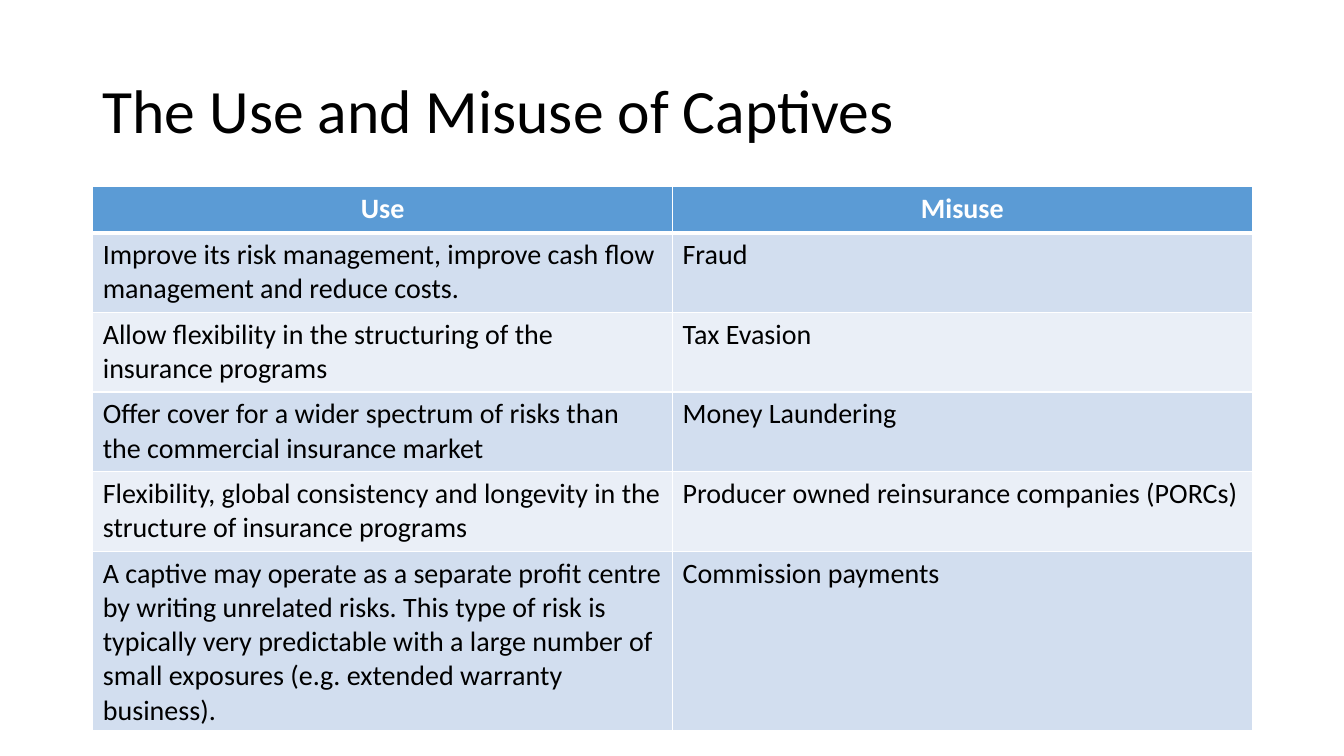
from lxml import etree
from pptx import Presentation
from pptx.dml.color import RGBColor
from pptx.enum.text import MSO_ANCHOR, PP_ALIGN
from pptx.oxml.ns import qn
from pptx.util import Inches, Pt

MIDDLE = MSO_ANCHOR.MIDDLE
LEFT, CENTER = PP_ALIGN.LEFT, PP_ALIGN.CENTER

COLORS = {
    "text": "000000",
    "white": "FFFFFF",
    "header": "5B9BD5",
    "odd": "D2DEEF",
    "even": "EAEFF7",
}

ROWS = [
    ("Use", "Misuse"),
    ("Improve its risk management, improve cash flow management and reduce costs.", "Fraud"),
    ("Allow flexibility in the structuring of the insurance programs", "Tax Evasion"),
    ("Offer cover for a wider spectrum of risks than the commercial insurance market",
     "Money Laundering"),
    ("Flexibility, global consistency and longevity in the structure of insurance programs",
     "Producer owned reinsurance companies (PORCs)"),
    ("A captive may operate as a separate profit centre by writing unrelated risks. "
     "This type of risk is typically very predictable with a large number of small "
     "exposures (e.g. extended warranty business).", "Commission payments"),
]
ROW_HEIGHTS = [0.46] + [0.79] * 4 + [1.78]


def write(frame, text, size=20, color="text", bold=False, align=LEFT, spacing=None):
    para = frame.paragraphs[0]
    para.alignment = align
    para.line_spacing = spacing
    span = para.add_run()
    span.text = text
    span.font.name = "Calibri"
    span.font.size = Pt(size)
    span.font.bold = bold
    span.font.color.rgb = RGBColor.from_string(COLORS[color])


class SlideBuilder:
    margin = 0.92
    column = 5.75

    def __init__(self, deck):
        self.page = deck.slides.add_slide(deck.slide_layouts[6])

    def area(self, top, columns, height):
        return [Inches(n) for n in (self.margin, top, columns * self.column, height)]

    def title(self, text, top, height):
        box = self.page.shapes.add_textbox(*self.area(top, 2, height))
        frame = box.text_frame
        frame.word_wrap = True
        frame.vertical_anchor = MIDDLE
        write(frame, text, size=44, spacing=0.9)

    def borders(self, cell, top, bottom):
        properties = cell._tc.get_or_add_tcPr()
        for side, width in (("L", 1), ("R", 1), ("T", top), ("B", bottom)):
            line = etree.SubElement(properties, qn(f"a:ln{side}"), w=str(Pt(width)))
            fill = etree.SubElement(line, qn("a:solidFill"))
            etree.SubElement(fill, qn("a:srgbClr"), val=COLORS["white"])

    def table(self, rows, heights, top):
        columns = len(rows[0])
        area = self.area(top, columns, sum(heights))
        table = self.page.shapes.add_table(len(rows), columns, *area).table
        for index, (texts, height) in enumerate(zip(rows, heights)):
            table.rows[index].height = Inches(height)
            header = index == 0
            shade = "header" if header else "odd" if index % 2 else "even"
            for cell, text in zip(table.rows[index].cells, texts):
                self.borders(cell, top=3 if index == 1 else 1, bottom=3 if header else 1)
                cell.fill.solid()
                cell.fill.fore_color.rgb = RGBColor.from_string(COLORS[shade])
                write(cell.text_frame, text, bold=header,
                      color="white" if header else "text",
                      align=CENTER if header else LEFT)


def main():
    deck = Presentation()
    deck.slide_width, deck.slide_height = Inches(13.33), Inches(7.5)
    builder = SlideBuilder(deck)
    builder.title("The Use and Misuse of Captives", top=0.4, height=1.45)
    builder.table(ROWS, ROW_HEIGHTS, top=1.85)
    deck.save("out.pptx")


if __name__ == "__main__":
    main()
